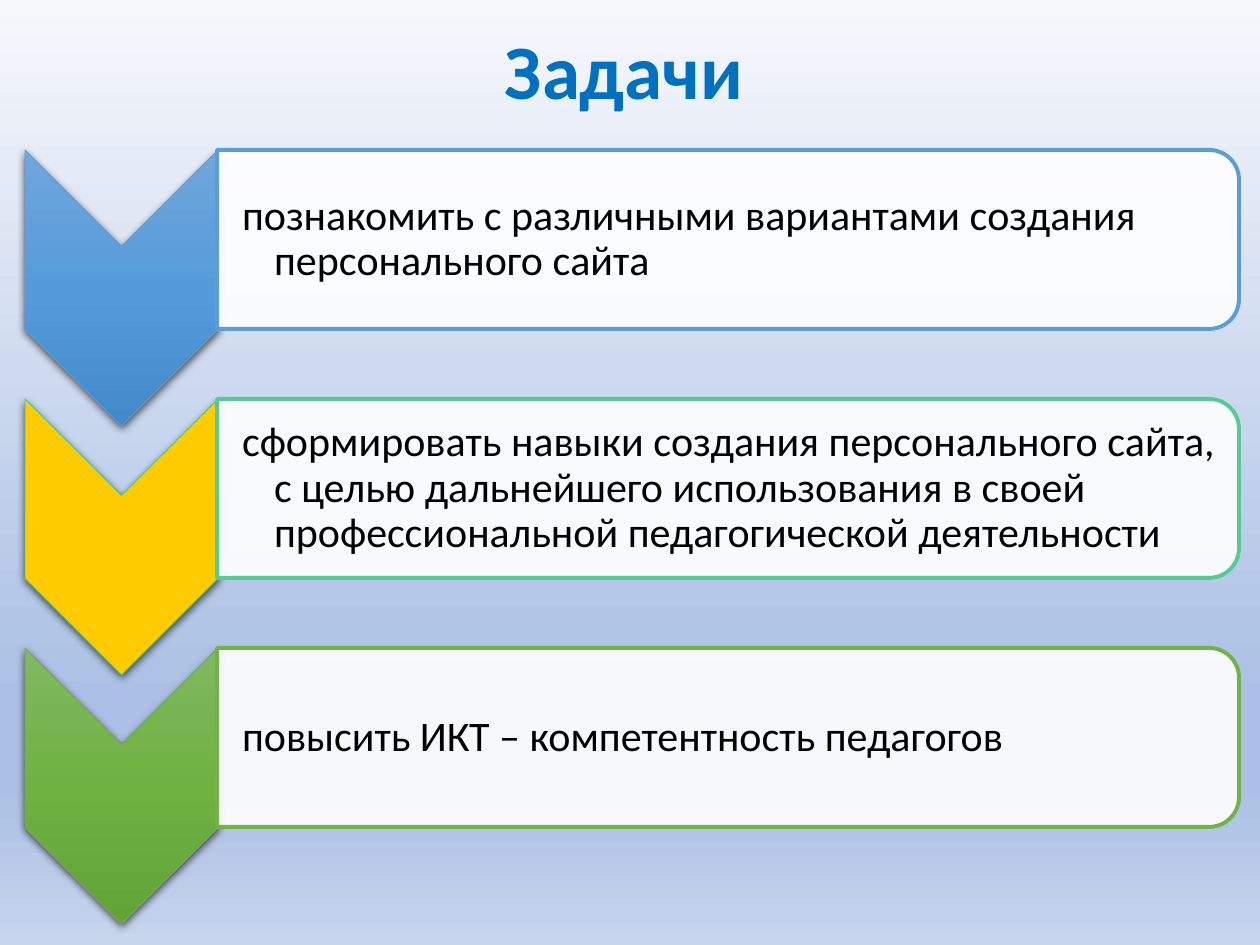
from lxml import etree
from pptx import Presentation
from pptx import util as u
from pptx.dml.color import RGBColor
from pptx.enum import shapes, text
from pptx.oxml.ns import qn

# Content
TITLE = "Задачи"
TASKS = [
    {"task": "познакомить с различными вариантами создания персонального сайта",
     "arrow": [(0, "71A6DB"), (50, "559BDB"), (100, "448ACA")],
     "edge": "5B9BD5", "border": "5A9DDB"},
    {"task": "сформировать навыки создания персонального сайта, с целью дальнейшего "
             "использования в своей профессиональной педагогической деятельности",
     "arrow": "FFCC00", "edge": "4DC58D", "border": "53CB93"},
    {"task": "повысить ИКТ – компетентность педагогов",
     "arrow": [(0, "81B861"), (50, "6FB242"), (100, "62A336")],
     "edge": "70AD47", "border": "72B348"},
]
COLORS = {"title": "0070C0", "text": "000000", "panel": "FFFFFF", "shadow": "000000"}
BACKGROUND = [(0, "F6F8FC"), (74, "ABC0E4"), (83, "ABC0E4"), (100, "C7D5ED")]
FONT = "Calibri"

# Layout in px, 126 to the inch
WIDTH, HEIGHT = 1260, 945
TOP, PITCH = 150, 249
ARROW_X, ARROW_W, ARROW_H = 25, 193, 276
PANEL_X, PANEL_W, PANEL_H = 217, 1022, 179
TEXT_W, TEXT_H = 1013, 161
INDENT = 32


def px(n):
    return u.Emu(round(n * 914400 / 126))


def rgb(value):
    return RGBColor.from_string(value)


def add(parent, tag, **attributes):
    return etree.SubElement(parent, qn(tag), attributes)


def fill_gradient(fill, root, stops):
    """Vertical gradient that stays upright when its shape is turned."""
    fill.gradient()
    fill.gradient_angle = 270
    gradient = next(root.iter(qn("a:gradFill")))
    gradient.set("rotWithShape", "0")
    stop_list = gradient.find(qn("a:gsLst"))
    for old in list(stop_list):
        stop_list.remove(old)
    for position, color in stops:
        stop = add(stop_list, "a:gs", pos=str(position * 1000))
        add(stop, "a:srgbClr", val=color)


def add_turned(kind, left, top, width, height, line, weight):
    """Preset shape turned 90 degrees that covers the given box."""
    shape = slide.shapes.add_shape(
        kind, px(left + (width - height) / 2), px(top + (height - width) / 2),
        px(height), px(width))
    shape.rotation = 90
    shape.shadow.inherit = False
    shape.line.color.rgb = rgb(line)
    shape.line.width = u.Pt(weight)
    return shape


def add_shadow(shape):
    effects = shape._element.spPr.find(qn("a:effectLst"))
    shadow = add(effects, "a:outerShdw", blurRad=str(u.Pt(4.5)), dist=str(u.Pt(1.5)),
                 dir="5400000", algn="ctr", rotWithShape="0")
    color = add(shadow, "a:srgbClr", val=COLORS["shadow"])
    add(color, "a:alpha", val="63000")


prs = Presentation()
prs.slide_width, prs.slide_height = px(WIDTH), px(HEIGHT)
slide = prs.slides.add_slide(prs.slide_layouts[5])
background = slide.background
fill_gradient(background.fill, slide._element, BACKGROUND)

# Title
title = slide.shapes.title
title.left, title.top, title.width, title.height = px(427), px(60), px(407), px(62)
frame = title.text_frame
frame.text = TITLE
frame.auto_size = text.MSO_AUTO_SIZE.NONE
frame.vertical_anchor = text.MSO_ANCHOR.BOTTOM
frame.margin_right = px(25)
heading = frame.paragraphs[0]
heading.alignment = text.PP_ALIGN.CENTER
heading.line_spacing = 0.9
heading.font.name, heading.font.size, heading.font.bold = FONT, u.Pt(44), True
heading.font.color.rgb = rgb(COLORS["title"])

# Tasks: arrow, panel and text in each row
for row, item in enumerate(TASKS):
    top = TOP + row * PITCH

    arrow = add_turned(shapes.MSO_SHAPE.CHEVRON, ARROW_X, top, ARROW_W, ARROW_H,
                       item["edge"], 0.5)
    if isinstance(item["arrow"], str):
        arrow.fill.solid()
        arrow.fill.fore_color.rgb = rgb(item["arrow"])
    else:
        fill_gradient(arrow.fill, arrow._element, item["arrow"])
    add_shadow(arrow)

    panel = add_turned(shapes.MSO_SHAPE.ROUND_2_SAME_RECTANGLE, PANEL_X, top,
                       PANEL_W, PANEL_H, item["border"], 2.25)
    panel.fill.solid()
    panel.fill.fore_color.rgb = rgb(COLORS["panel"])
    panel_color = panel._element.spPr.find(qn("a:solidFill")).find(qn("a:srgbClr"))
    add(panel_color, "a:alpha", val="90000")

    label = slide.shapes.add_textbox(px(PANEL_X + 1), px(top + (PANEL_H - TEXT_H) / 2),
                                     px(TEXT_W), px(TEXT_H))
    frame = label.text_frame
    frame.word_wrap = True
    frame.vertical_anchor = text.MSO_ANCHOR.MIDDLE
    frame.margin_left = px(24)
    frame.margin_top = frame.margin_right = frame.margin_bottom = px(2)
    task = frame.paragraphs[0]
    task.text = item["task"]
    task.line_spacing = 0.9
    task.font.name, task.font.size = FONT, u.Pt(24)
    task.font.color.rgb = rgb(COLORS["text"])
    properties = task._p.get_or_add_pPr()
    properties.set("marL", str(px(INDENT)))
    properties.set("indent", str(-px(INDENT)))

prs.save("out.pptx")
